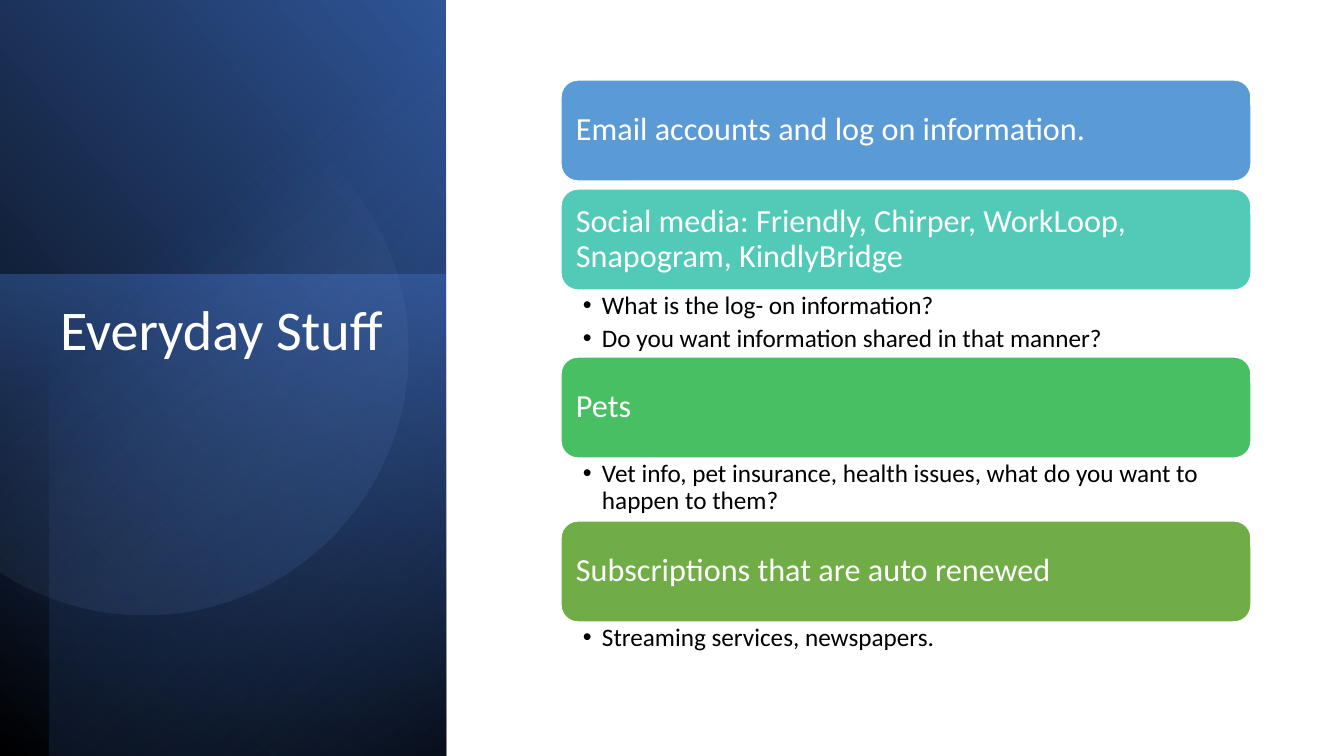
from math import acos, cos, pi, sin

from lxml.etree import SubElement
from pptx import Presentation
from pptx.dml.color import RGBColor
from pptx.enum.shapes import MSO_SHAPE
from pptx.enum.text import MSO_ANCHOR
from pptx.oxml.ns import qn
from pptx.util import Pt

EMU_PER_PX = 914400 / 100.8
FONT = "Calibri"
COLORS = {
    "white": "FFFFFF", "black": "000000", "navy": "203864", "deep": "2F5597",
    "royal": "4472C4", "pale": "8FAADC",
    "blue": "5B9BD5", "teal": "52CAB8", "green": "49BF64", "olive": "70AD47",
}
BAR_HEIGHT = 101
BAR_GAP = 8
# bar colour, heading, bullets, height of the bullet area
TOPICS = [
    ("blue", "Email accounts and log on information.", [], BAR_GAP),
    ("teal", "Social media: Friendly, Chirper, WorkLoop, Snapogram, KindlyBridge",
     ["What is the log- on information?",
      "Do you want information shared in that manner?"], 67),
    ("green", "Pets",
     ["Vet info, pet insurance, health issues, what do you want to happen to them?"], 63),
    ("olive", "Subscriptions that are auto renewed",
     ["Streaming services, newspapers."], 42),
]


def px(length):
    return round(length * EMU_PER_PX)


def color(name):
    return RGBColor.from_string(COLORS[name])


def fill_gradient(shape, angle, stops):
    """Fill with (position %, colour, opacity %) stops; angle is clockwise."""
    shape.shadow.inherit = False
    shape.line.fill.background()
    shape.fill.gradient()
    shape.fill.gradient_angle = 360 - angle
    for stop, (position, name, _) in zip(shape.fill.gradient_stops, stops):
        stop.position = position / 100
        stop.color.rgb = color(name)
    tags = shape._element.spPr.iter(qn("a:srgbClr"))
    for tag, (_, _, opacity) in zip(list(tags), stops):
        SubElement(tag, qn("a:alpha"), val=str(opacity * 1000))


def add_box(page, left, top, width, height):
    return page.shapes.add_textbox(px(left), px(top), px(width), px(height))


def set_frame(frame, left, top, right, bottom):
    frame.word_wrap = True
    frame.margin_left, frame.margin_top = px(left), px(top)
    frame.margin_right, frame.margin_bottom = px(right), px(bottom)


def write(para, text, size, name):
    para.text = text
    para.line_spacing = 0.9
    para.font.size = Pt(size)
    para.font.name = FONT
    para.font.color.rgb = color(name)


def add_disc(page, left, center_x, center_y, radius):
    """A circle cut off straight at the left edge of the panel."""
    reach = pi - acos((center_x - left) / radius)
    steps = 120
    angles = [-reach + 2 * reach * step / steps for step in range(steps + 1)]
    points = [(px(center_x + radius * cos(angle)), px(center_y + radius * sin(angle)))
              for angle in angles]
    builder = page.shapes.build_freeform(*points[0])
    builder.add_line_segments(points[1:], close=True)
    return builder.convert_to_shape()


def add_title_panel(page, left, top, width, height):
    def layer(inset_left, inset_top, angle, stops):
        shape = page.shapes.add_shape(
            MSO_SHAPE.RECTANGLE, px(left + inset_left), px(top + inset_top),
            px(width - inset_left), px(height - inset_top))
        fill_gradient(shape, angle, stops)

    layer(0, 0, 320, [(0, "black", 100), (100, "deep", 100)])
    layer(0, 275, 100, [(0, "royal", 50), (100, "navy", 0)])
    layer(50, 0, 230, [(0, "black", 59), (69, "royal", 0)])
    disc = add_disc(page, left, left + 144, top + 351, 264)
    fill_gradient(disc, 52, [(39, "pale", 0), (100, "deep", 26)])

    title = add_box(page, left + 50, top + 297, width - 90, 339)
    set_frame(title.text_frame, 10, 5, 10, 5)
    write(title.text_frame.paragraphs[0], "Everyday Stuff", 40, "white")


def add_bar(page, left, top, width, fill, heading):
    bar = page.shapes.add_shape(
        MSO_SHAPE.ROUNDED_RECTANGLE, px(left), px(top), px(width), px(BAR_HEIGHT))
    bar.shadow.inherit = False
    bar.fill.solid()
    bar.fill.fore_color.rgb = color(fill)
    bar.line.color.rgb = color("white")
    bar.line.width = Pt(1)
    frame = bar.text_frame
    set_frame(frame, 10, 10, 10, 10)
    frame.vertical_anchor = MSO_ANCHOR.MIDDLE
    para = frame.paragraphs[0]
    write(para, heading, 23, "white")
    para._p.get_or_add_pPr().set("algn", "l")


def add_bullets(page, left, top, width, height, bullets):
    frame = add_box(page, left, top, width, height).text_frame
    set_frame(frame, 22, 3, 18, 3)
    for index, text in enumerate(bullets):
        para = frame.add_paragraph() if index else frame.paragraphs[0]
        write(para, text, 18, "black")
        para.space_after = Pt(3.6)
        properties = para._p.get_or_add_pPr()
        properties.set("marL", str(px(19)))
        properties.set("indent", str(-px(19)))
        bullet_font = SubElement(properties, qn("a:buFont"), typeface="Arial")
        bullet = SubElement(properties, qn("a:buChar"), char="•")
        properties.find(qn("a:defRPr")).addprevious(bullet_font)
        bullet_font.addnext(bullet)


def add_topics(page, left, top, width):
    for fill, heading, bullets, space in TOPICS:
        add_bar(page, left, top, width, fill, heading)
        top += BAR_HEIGHT
        if bullets:
            add_bullets(page, left, top, width, space, bullets)
        top += space


def main():
    deck = Presentation()
    deck.slide_width, deck.slide_height = px(1344), px(756)
    page = deck.slides.add_slide(deck.slide_layouts[6])
    add_title_panel(page, 0, 0, 446, 756)
    add_topics(page, 561, 80, 690)
    deck.save("out.pptx")


if __name__ == "__main__":
    main()
